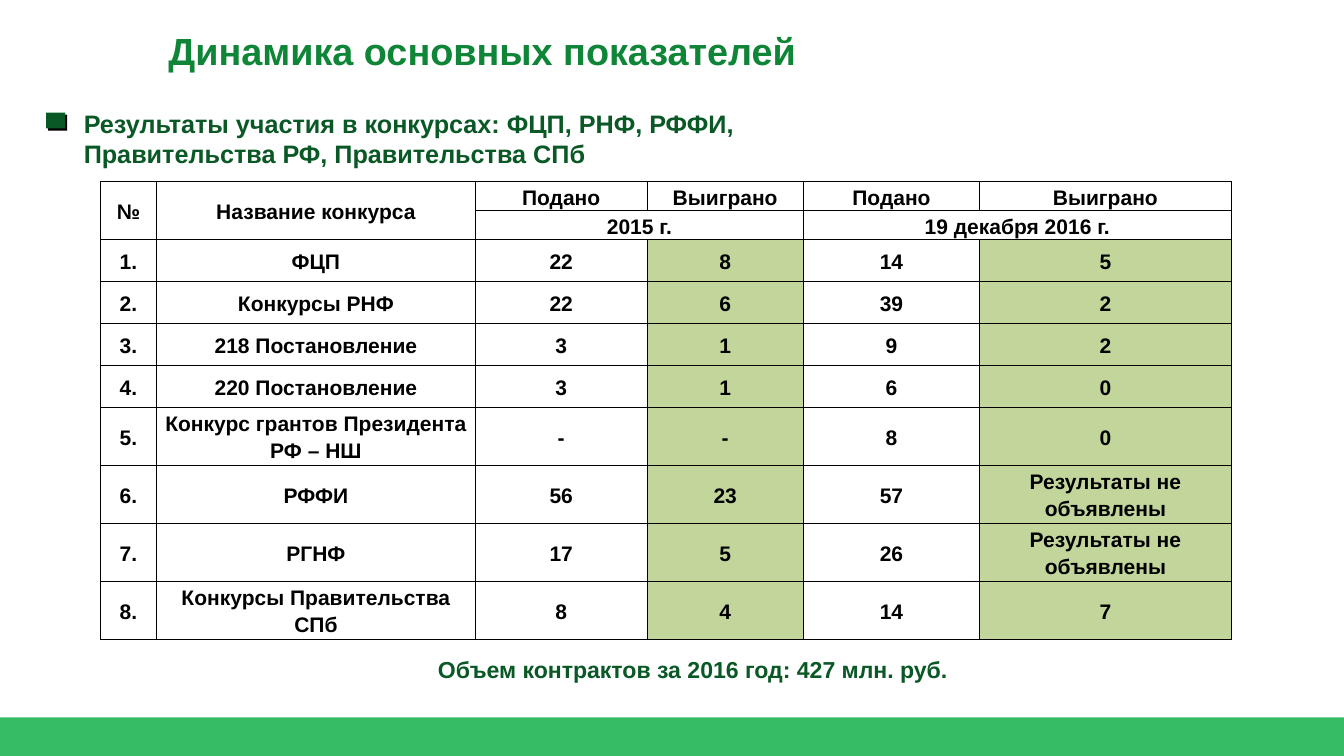
import dataclasses

import lxml.etree
import pptx
import pptx.dml.color
import pptx.enum.shapes
import pptx.enum.text
import pptx.oxml
import pptx.oxml.ns
import pptx.util

ANCHOR = pptx.enum.text.MSO_ANCHOR
ALIGN = pptx.enum.text.PP_ALIGN
qn = pptx.oxml.ns.qn


@dataclasses.dataclass(frozen=True)
class Theme:
    """Hold the colours and type sizes of the slide."""
    font: str = "Arial"
    title: str = "0E8537"
    accent: str = "095825"
    band: str = "13B14A"
    won: str = "C2D69B"
    ink: str = "000000"
    title_size: int = 36
    heading_size: int = 24
    total_size: int = 22
    table_size: int = 20


@dataclasses.dataclass(frozen=True)
class Box:
    """Describe a rectangle in slide units."""
    x: float
    y: float
    w: float
    h: float

    def inner(self, x, y, w, h):
        """Return a box placed on a 100 by 100 grid inside this one."""
        return Box(self.x + self.w * x / 100, self.y + self.h * y / 100,
                   self.w * w / 100, self.h * h / 100)

    def emu(self):
        """Return left, top, width and height as whole units."""
        return [pptx.util.Emu(round(v)) for v in (self.x, self.y, self.w, self.h)]


THEME = Theme()

HEADER = ["№", "Название конкурса", "Подано", "Выиграно", "Подано", "Выиграно"]
PERIODS = ["", "", "2015 г.", "", "19 декабря 2016 г.", ""]
PENDING = "Результаты не объявлены"
CONTESTS = [
    ["ФЦП", "22", "8", "14", "5"],
    ["Конкурсы РНФ", "22", "6", "39", "2"],
    ["218 Постановление", "3", "1", "9", "2"],
    ["220 Постановление", "3", "1", "6", "0"],
    ["Конкурс грантов Президента РФ – НШ", "-", "-", "8", "0"],
    ["РФФИ", "56", "23", "57", PENDING],
    ["РГНФ", "17", "5", "26", PENDING],
    ["Конкурсы Правительства СПб", "8", "4", "14", "7"],
]
COLUMN_SHARES = [0.74, 4.22, 2.27, 2.07, 2.33, 3.33]
ROW_SHARES = [27, 27, 42, 42, 42, 42, 58, 54, 54, 54]
WON_COLUMNS = (3, 5)


def rgb(value):
    """Turn a hex string into a colour."""
    return pptx.dml.color.RGBColor.from_string(value)


def style(p, size, color, align=ALIGN.LEFT):
    """Set the bold face, size, colour and alignment of a paragraph."""
    p.alignment = align
    p.font.name = THEME.font
    p.font.size = pptx.util.Pt(size)
    p.font.bold = True
    p.font.color.rgb = rgb(color)


def add_text(s, box, lines, size, color, align=ALIGN.LEFT, anchor=ANCHOR.TOP):
    """Add a text box with one paragraph for each line."""
    tf = s.shapes.add_textbox(*box.emu()).text_frame
    tf.word_wrap = True
    tf.vertical_anchor = anchor
    tf.text = "\n".join(lines)
    for p in tf.paragraphs:
        style(p, size, color, align)


def add_rect(s, box, color):
    """Add a plain filled rectangle."""
    sp = s.shapes.add_shape(pptx.enum.shapes.MSO_SHAPE.RECTANGLE, *box.emu())
    sp.shadow.inherit = False
    sp.fill.solid()
    sp.fill.fore_color.rgb = rgb(color)
    sp.line.fill.background()
    return sp


def add_band(s, box):
    """Add the translucent band at the foot of the slide."""
    sp = add_rect(s, box, THEME.band)
    color = sp._element.spPr.find(qn("a:solidFill")).find(qn("a:srgbClr"))
    lxml.etree.SubElement(color, qn("a:alpha"), val="85000")


def add_heading(s, box):
    """Add the square marker with its shadow and the two-line heading."""
    sp = add_rect(s, box.inner(0, 12.09, 2.05, 23.08), THEME.accent)
    effects = sp._element.spPr.find(qn("a:effectLst"))
    shadow = lxml.etree.SubElement(effects, qn("a:outerShdw"), dist="35560",
                                   dir="2700000", algn="ctr", rotWithShape="0")
    lxml.etree.SubElement(shadow, qn("a:srgbClr"), val=THEME.ink)
    add_text(s, box.inner(3.27, 0, 96.73, 100),
             ["Результаты участия в конкурсах: ФЦП, РНФ, РФФИ,",
              "Правительства РФ, Правительства СПб"],
             THEME.heading_size, THEME.accent)


def add_borders(cell):
    """Draw a thin line on each side of a cell."""
    tc_pr = cell._tc.get_or_add_tcPr()
    for i, side in enumerate(("a:lnL", "a:lnR", "a:lnT", "a:lnB")):
        ln = lxml.etree.Element(qn(side), w="12700")
        fill = lxml.etree.SubElement(ln, qn("a:solidFill"))
        lxml.etree.SubElement(fill, qn("a:srgbClr"), val=THEME.ink)
        tc_pr.insert(i, ln)


def fill_cell(cell, text, color):
    """Write and format one table cell."""
    cell.text = text
    cell.vertical_anchor = ANCHOR.MIDDLE
    cell.margin_left = cell.margin_right = pptx.util.Inches(0.07)
    cell.margin_top = cell.margin_bottom = 0
    p = cell.text_frame.paragraphs[0]
    style(p, THEME.table_size, THEME.ink, ALIGN.CENTER)
    p.line_spacing = 1.15
    if color:
        cell.fill.solid()
        cell.fill.fore_color.rgb = rgb(color)
    else:
        cell.fill.background()
    add_borders(cell)


def add_contest_table(s, box):
    """Add the table of applications filed and won."""
    numbered = [[f"{i}.", *row] for i, row in enumerate(CONTESTS, 1)]
    rows = [HEADER, PERIODS, *numbered]
    table = s.shapes.add_table(len(rows), len(HEADER), *box.emu()).table
    table.first_row = table.horz_banding = False
    for column, share in zip(table.columns, COLUMN_SHARES):
        column.width = round(box.w * share / sum(COLUMN_SHARES))
    for row, share in zip(table.rows, ROW_SHARES):
        row.height = round(box.h * share / sum(ROW_SHARES))
    for i, row in enumerate(rows):
        for j, text in enumerate(row):
            won = i > 1 and j in WON_COLUMNS
            fill_cell(table.cell(i, j), text, THEME.won if won else None)
    for j in (0, 1):
        table.cell(0, j).merge(table.cell(1, j))
    for j in (2, 4):
        table.cell(1, j).merge(table.cell(1, j + 1))


def add_title(s, box):
    """Add the slide title."""
    add_text(s, box, ["Динамика основных показателей"],
             THEME.title_size, THEME.title, anchor=ANCHOR.MIDDLE)


def add_total(s, box):
    """Add the line with the total contract value."""
    add_text(s, box, ["Объем контрактов за 2016 год: 427 млн. руб."],
             THEME.total_size, THEME.accent, ALIGN.CENTER)


def main():
    """Build the slide and save it."""
    prs = pptx.Presentation()
    prs.slide_width = pptx.util.Inches(17.78)
    prs.slide_height = pptx.util.Inches(10)
    s = prs.slides.add_slide(prs.slide_layouts[6])
    page = Box(0, 0, prs.slide_width, prs.slide_height)
    add_band(s, page.inner(0, 94.9, 100, 5.1))
    add_heading(s, page.inner(3.43, 13.8, 68.79, 9.1))
    add_title(s, page.inner(11.98, 1.1, 87.18, 11.1))
    add_contest_table(s, page.inner(7.48, 24, 84.14, 58.4))
    add_total(s, page.inner(31.83, 86.2, 39.43, 4.7))
    prs.save("out.pptx")


if __name__ == "__main__":
    main()
